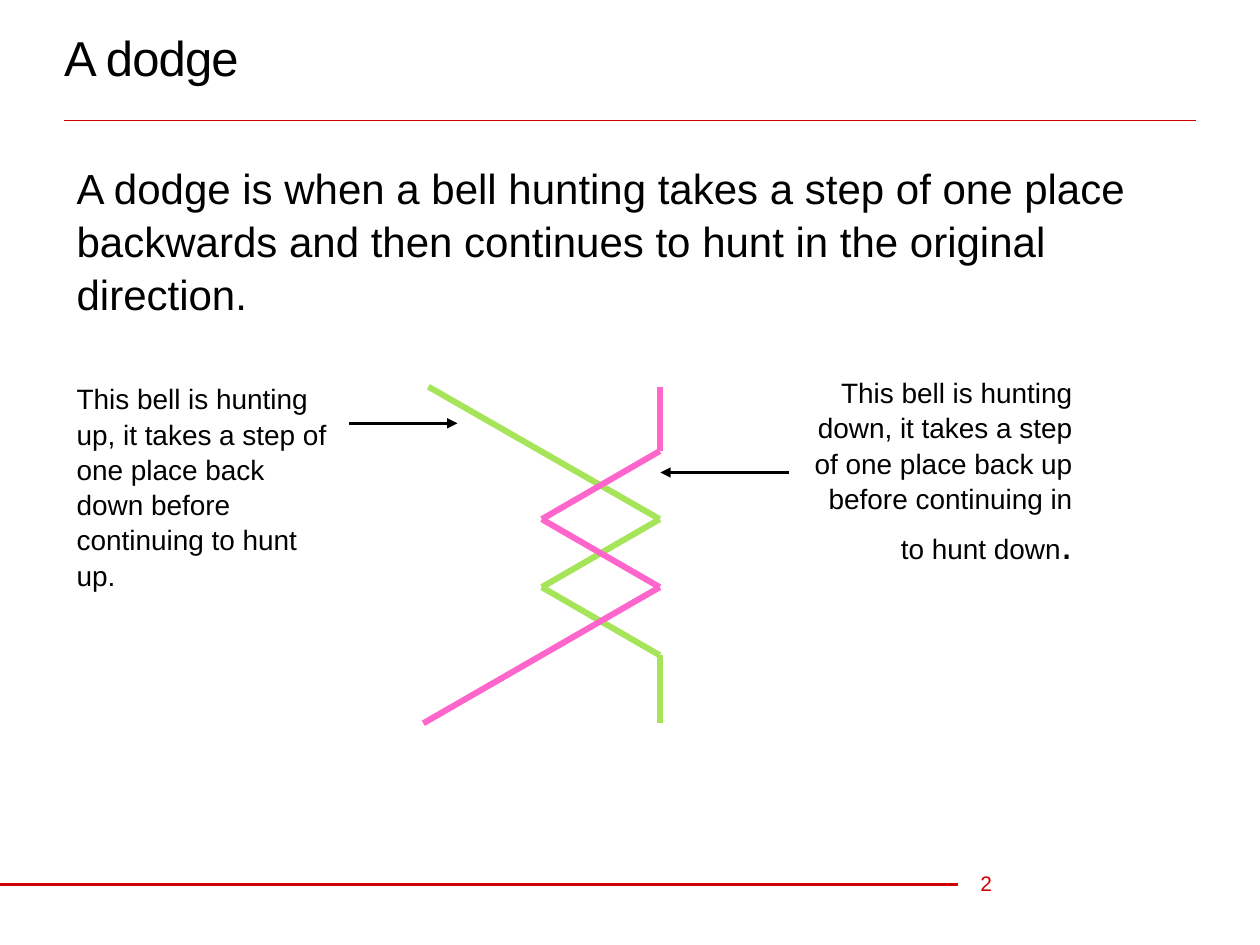
"""Build the slide that explains a dodge in bell ringing."""
import dataclasses
import itertools

import pptx
import pptx.dml.color
import pptx.enum.shapes
import pptx.enum.text
import pptx.oxml.ns
import pptx.util
from lxml import etree

Pt = pptx.util.Pt
ALIGN = pptx.enum.text.PP_ALIGN
ANCHOR = pptx.enum.text.MSO_ANCHOR


@dataclasses.dataclass(frozen=True)
class Theme:
    font: str = "Arial"
    ink: str = "000000"
    accent: str = "D20000"
    green: str = "A6E559"
    pink: str = "FF66CC"
    title: float = 28
    lead: float = 24
    label: float = 16
    number: float = 12
    bell_line: float = 3.5
    arrow_line: float = 1.75


THEME = Theme()
MARGIN = 36.7
CONTENT_WIDTH = 646.6
LABEL_TOP = 213.8


def add_child(parent, tag, **attributes):
    return etree.SubElement(parent, pptx.oxml.ns.qn(tag), attributes)


def place(shape, left, top, width, height):
    shape.left, shape.top = Pt(left), Pt(top)
    shape.width, shape.height = Pt(width), Pt(height)


def write(shape, *pieces, color=THEME.ink, align=ALIGN.LEFT, anchor=ANCHOR.TOP,
          inset=(0, 0), spacing=1.05, tracking=None, bullet=True):
    """Fill a shape with one paragraph made of (text, size) pieces."""
    frame = shape.text_frame
    frame.word_wrap = True
    frame.auto_size = pptx.enum.text.MSO_AUTO_SIZE.NONE
    frame.vertical_anchor = anchor
    frame.margin_left = frame.margin_right = Pt(inset[0])
    frame.margin_top = frame.margin_bottom = Pt(inset[1])
    para = frame.paragraphs[0]
    para.alignment = align
    para.line_spacing = spacing
    para.space_before = Pt(0)
    if not bullet:
        properties = para._p.get_or_add_pPr()
        properties.set("marL", "0")
        properties.set("indent", "0")
        add_child(properties, "a:buNone")
    for text, size in pieces:
        span = para.add_run()
        span.text = text
        span.font.name = THEME.font
        span.font.size = Pt(size)
        span.font.color.rgb = pptx.dml.color.RGBColor.from_string(color)
        if tracking is not None:
            span._r.get_or_add_rPr().set("spc", str(round(tracking * 100)))


def add_text(page, area, *pieces, **style):
    box = page.shapes.add_textbox(*map(Pt, area))
    write(box, *pieces, **style)


def add_line(page, start, end, color, weight, arrow=False):
    line = page.shapes.add_connector(
        pptx.enum.shapes.MSO_CONNECTOR.STRAIGHT, *map(Pt, (*start, *end)))
    line.line.color.rgb = pptx.dml.color.RGBColor.from_string(color)
    line.line.width = Pt(weight)
    if arrow:
        add_child(line.line._get_or_add_ln(), "a:tailEnd", type="triangle")
    add_child(line._element.spPr, "a:effectLst")


def add_bell_path(page, points, color):
    for start, end in itertools.pairwise(points):
        add_line(page, start, end, color, THEME.bell_line)


def add_dodge(page):
    """Draw the two bells crossing, one row per change."""
    middle, right = 309.6, 377
    rows = [221] + [257.8 + 38.88 * step for step in range(5)]
    add_bell_path(page, [(244.8, rows[0]), (right, rows[2]), (middle, rows[3]),
                         (right, rows[4]), (right, rows[5])], THEME.green)
    add_bell_path(page, [(right, rows[0]), (right, rows[1]), (middle, rows[2]),
                         (right, rows[3]), (241.9, rows[5])], THEME.pink)


def main():
    deck = pptx.Presentation()
    deck.slide_width, deck.slide_height = Pt(720), Pt(540)
    page = deck.slides.add_slide(deck.slide_layouts[1])

    add_line(page, (MARGIN, 69.1), (MARGIN + CONTENT_WIDTH, 69.1), THEME.accent, 0.5)
    add_line(page, (0, 505.4), (547.2, 505.4), THEME.accent, 2)
    add_text(page, (560.2, 490.3, 36.7, 28.8), ("2", THEME.number),
             color=THEME.accent, anchor=ANCHOR.MIDDLE, spacing=1)

    title, body = page.placeholders
    place(title, MARGIN, 3.6, CONTENT_WIDTH, 58.3)
    write(title, ("A dodge", THEME.title), anchor=ANCHOR.MIDDLE,
          spacing=1, tracking=-0.5)
    place(body, 459.4, LABEL_TOP, 153.4, 152.6)
    write(body, ("This bell is hunting down, it takes a step of one place back up "
                 "before continuing in to hunt down", THEME.label),
          (".", THEME.lead), align=ALIGN.RIGHT, bullet=False)

    add_dodge(page)
    add_text(page, (MARGIN, 87.8, CONTENT_WIDTH, 116.6),
             ("A dodge is when a bell hunting takes a step of one place backwards "
              "and then continues to hunt in the original direction.", THEME.lead),
             inset=(7.2, 3.6))
    add_text(page, (MARGIN, LABEL_TOP, 162.7, 123.8),
             ("This bell is hunting up, it takes a step of one place back down "
              "before continuing to hunt up.", THEME.label), inset=(7.2, 3.6))
    for start, end in (((199.4, 241.9), (261.4, 241.9)), ((450.7, 270), (377.3, 270))):
        add_line(page, start, end, THEME.ink, THEME.arrow_line, arrow=True)

    deck.save("out.pptx")


if __name__ == "__main__":
    main()
